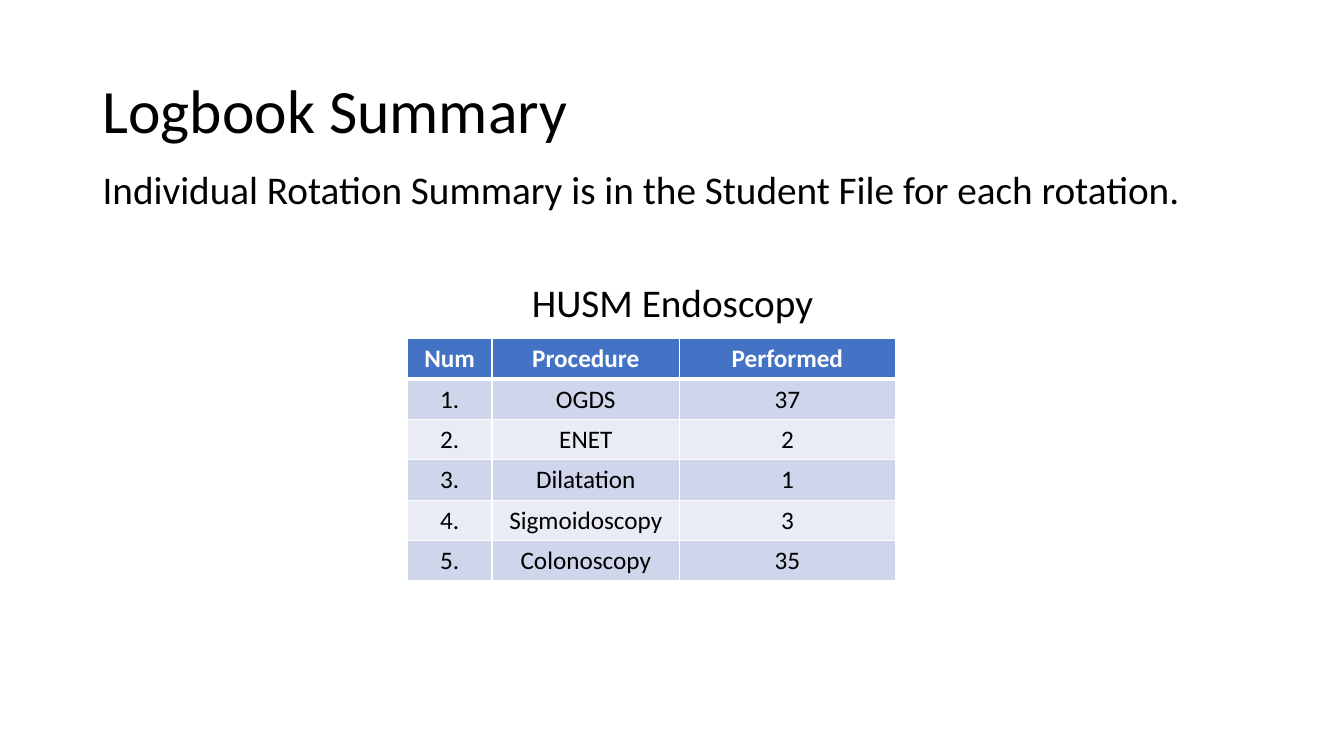
from dataclasses import dataclass

from lxml import etree
from pptx import Presentation
from pptx.dml.color import RGBColor
from pptx.enum.text import MSO_ANCHOR, PP_ALIGN
from pptx.oxml.ns import qn
from pptx.util import Inches, Pt

CENTER = PP_ALIGN.CENTER
LEFT = PP_ALIGN.LEFT
TOP = MSO_ANCHOR.TOP
MIDDLE = MSO_ANCHOR.MIDDLE


@dataclass(frozen=True)
class Theme:
    font: str = "Calibri"
    title_size: int = 44
    body_size: int = 28
    table_size: int = 18
    text: str = "000000"
    white: str = "FFFFFF"
    header: str = "4472C4"
    bands: tuple = ("CFD5EA", "E9EBF5")
    rule: int = 1
    header_rule: int = 3


THEME = Theme()

PROCEDURES = [("OGDS", 37), ("ENET", 2), ("Dilatation", 1),
              ("Sigmoidoscopy", 3), ("Colonoscopy", 35)]
HEADINGS = ("Num", "Procedure", "Performed")
COLUMN_WIDTHS = (0.84, 1.86, 2.14)
ROW_HEIGHT = 0.4


def style_paragraph(paragraph, size, color=THEME.text, bold=False, align=LEFT):
    paragraph.alignment = align
    font = paragraph.font
    font.name, font.size, font.bold = THEME.font, Pt(size), bold
    font.color.rgb = RGBColor.from_string(color)


def add_text_frame(slide, box, anchor):
    frame = slide.shapes.add_textbox(*map(Inches, box)).text_frame
    frame.word_wrap = True
    frame.vertical_anchor = anchor
    return frame


def add_title(slide, box):
    title = add_text_frame(slide, box, MIDDLE).paragraphs[0]
    title.text = "Logbook Summary"
    title.line_spacing = 0.9
    style_paragraph(title, THEME.title_size)


def add_body(slide, box):
    frame = add_text_frame(slide, box, TOP)
    summary = frame.paragraphs[0]
    summary.text = "Individual Rotation Summary is in the Student File for each rotation."
    table_caption = frame.add_paragraph()
    table_caption.text = "HUSM Endoscopy"
    table_caption.space_before = Pt(51)
    for paragraph, align in ((summary, LEFT), (table_caption, CENTER)):
        paragraph.line_spacing = 0.9
        style_paragraph(paragraph, THEME.body_size, align=align)


def set_borders(cell, top, bottom):
    """Rule all four sides; called before the fill, which must follow in the XML."""
    properties = cell._tc.get_or_add_tcPr()
    widths = {"lnL": THEME.rule, "lnR": THEME.rule, "lnT": top, "lnB": bottom}
    for side, width in widths.items():
        line = etree.SubElement(properties, qn(f"a:{side}"), w=str(Pt(width)))
        fill = etree.SubElement(line, qn("a:solidFill"))
        etree.SubElement(fill, qn("a:srgbClr"), val=THEME.white)


def add_procedure_table(slide, left, top):
    rows = [HEADINGS] + [(f"{number}.", procedure, performed) for number, (procedure, performed)
                         in enumerate(PROCEDURES, start=1)]
    table = slide.shapes.add_table(
        len(rows), len(HEADINGS), Inches(left), Inches(top),
        Inches(sum(COLUMN_WIDTHS)), Inches(ROW_HEIGHT * len(rows))).table
    for column, width in zip(table.columns, COLUMN_WIDTHS):
        column.width = Inches(width)

    for r, values in enumerate(rows):
        is_header = r == 0
        fill = THEME.header if is_header else THEME.bands[(r - 1) % 2]
        color = THEME.white if is_header else THEME.text
        for c, value in enumerate(values):
            cell = table.cell(r, c)
            cell.text = str(value)
            style_paragraph(cell.text_frame.paragraphs[0], THEME.table_size,
                            color, is_header, CENTER)
            set_borders(cell,
                        top=THEME.header_rule if r == 1 else THEME.rule,
                        bottom=THEME.header_rule if is_header else THEME.rule)
            cell.fill.solid()
            cell.fill.fore_color.rgb = RGBColor.from_string(fill)


def main():
    deck = Presentation()
    deck.slide_width, deck.slide_height = Inches(13.33), Inches(7.5)
    slide = deck.slides.add_slide(deck.slide_layouts[6])

    # Heading and introduction
    add_title(slide, (0.92, 0.4, 11.5, 1.45))
    add_body(slide, (0.92, 1.64, 11.5, 4.76))

    # Endoscopy counts
    add_procedure_table(slide, left=4.04, top=3.36)

    deck.save("out.pptx")


if __name__ == "__main__":
    main()
